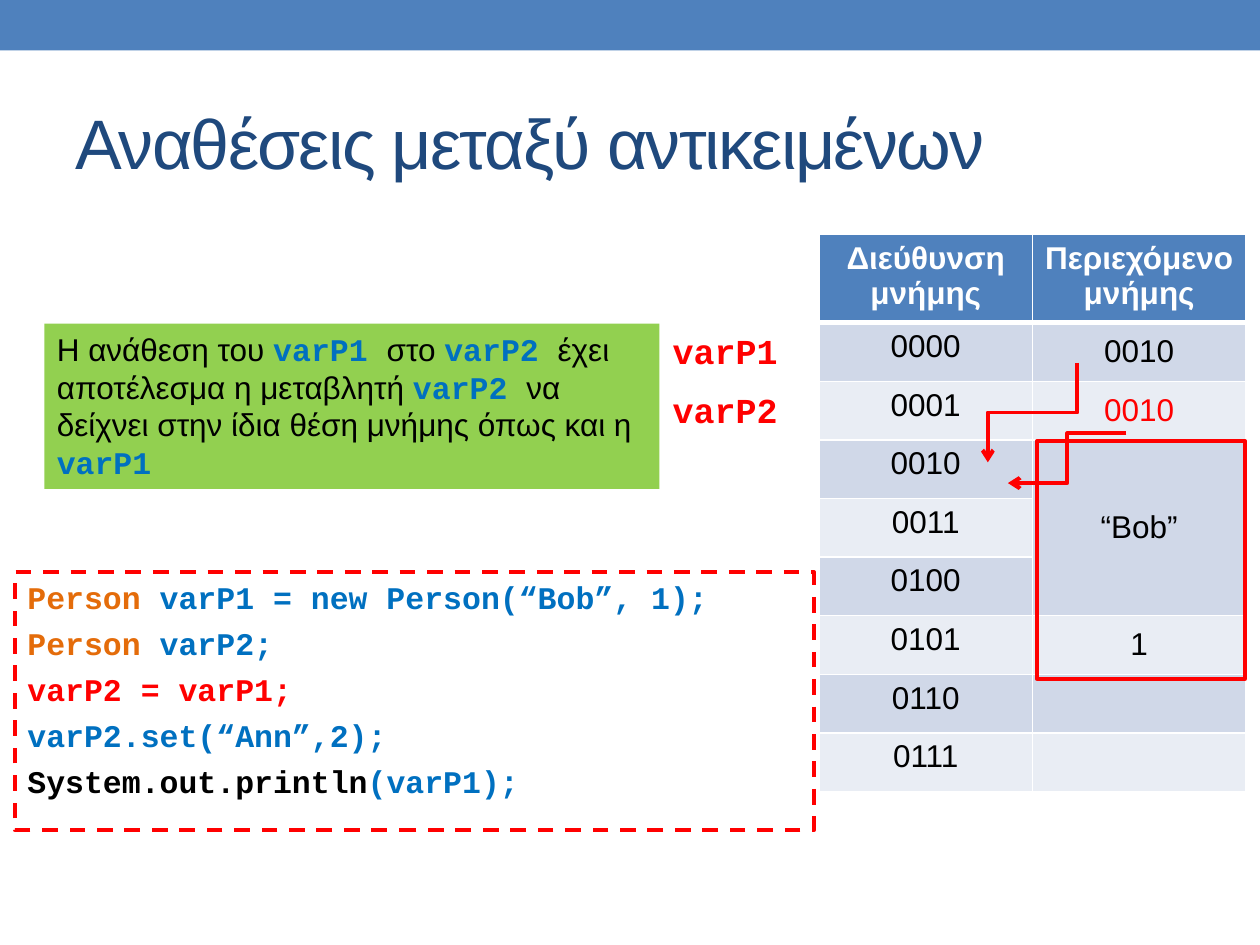
from pptx import Presentation
from pptx.dml.color import RGBColor
from pptx.enum.dml import MSO_LINE
from pptx.enum.shapes import MSO_CONNECTOR, MSO_SHAPE
from pptx.enum.text import MSO_ANCHOR as Anchor, PP_ALIGN as Align
from pptx.oxml.ns import qn
from pptx.util import Pt
from lxml.etree import SubElement

BLUE, RED, BLACK, WHITE = "4F81BD", "FF0000", "000000", "FFFFFF"
CODE_BLUE, ORANGE = "0070C0", "E46C0A"
SANS, MONO = "Arial", "Courier New"


def color(value):
    return RGBColor.from_string(value)


def set_font(font, name, size, value, bold=False):
    font.name, font.size, font.bold = name, Pt(size), bold
    font.color.rgb = color(value)


deck = Presentation()
deck.slide_width, deck.slide_height = Pt(720), Pt(540)
page = deck.slides.add_slide(deck.slide_layouts[6])
shapes = page.shapes

# Top band
band = shapes.add_shape(MSO_SHAPE.RECTANGLE, 0, 0, Pt(720), Pt(28.8))
band.shadow.inherit = False
band.fill.solid()
band.fill.fore_color.rgb = color(BLUE)
band.line.fill.background()

# Title
title = shapes.add_textbox(Pt(36), Pt(42), Pt(648), Pt(78)).text_frame
title.word_wrap = True
title.vertical_anchor = Anchor.MIDDLE
span = title.paragraphs[0].add_run()
span.text = "Αναθέσεις μεταξύ αντικειμένων"
set_font(span.font, SANS, 40, "1F497D")
span._r.get_or_add_rPr().set("spc", "-100")

# Code in a dashed frame
code_lines = [
    [("Person ", ORANGE), ("varP1 = new Person(“Bob”, 1);", CODE_BLUE)],
    [("Person ", ORANGE), ("varP2;", CODE_BLUE)],
    [("varP2 = varP1;", RED)],
    [("varP2.set(“Ann”,2);", CODE_BLUE)],
    [("System.out.println", BLACK), ("(varP1);", CODE_BLUE)],
]
code_box = shapes.add_textbox(Pt(8.6), Pt(326.9), Pt(456.5), Pt(147.6))
code_box.line.color.rgb = color(RED)
code_box.line.width = Pt(2.25)
code_box.line.dash_style = MSO_LINE.DASH
code = code_box.text_frame
code.word_wrap = True
for index, parts in enumerate(code_lines):
    para = code.add_paragraph() if index else code.paragraphs[0]
    para.space_before = Pt(4.7) if index else Pt(0)
    for text, value in parts:
        span = para.add_run()
        span.text = text
        set_font(span.font, MONO, 18, value, True)

# Memory table
contents = ["0010", "0010", "“Bob”", "", "", "1", "", ""]
rows = [("Διεύθυνση μνήμης", "Περιεχόμενο μνήμης")]
rows += [(f"{address:04b}", content) for address, content in enumerate(contents)]
table = shapes.add_table(len(rows), 2, Pt(468), Pt(134), Pt(244), Pt(315)).table
for column in table.columns:
    column.width = Pt(122)
for r, row in enumerate(rows):
    table.rows[r].height = Pt(33.5 if r else 46.8)
    for c, text in enumerate(row):
        cell = table.cell(r, c)
        cell.text = text
        if r and c:
            cell.vertical_anchor = Anchor.MIDDLE
        para = cell.text_frame.paragraphs[0]
        para.alignment = Align.CENTER
        value = WHITE if r == 0 else RED if (r, c) == (2, 1) else BLACK
        set_font(para.font, SANS, 18, value, r == 0)
        # White cell borders, thicker under the header
        properties = cell._tc.get_or_add_tcPr()
        for side in "LRTB":
            thick = (r, side) in ((0, "B"), (1, "T"))
            border = SubElement(properties, qn(f"a:ln{side}"), w=str(Pt(3 if thick else 1)))
            fill = SubElement(border, qn("a:solidFill"))
            SubElement(fill, qn("a:srgbClr"), val=WHITE)
        cell.fill.solid()
        band_fill = "D0D8E8" if r % 2 else "E9EDF4"
        cell.fill.fore_color.rgb = color(band_fill if r else BLUE)
table.cell(3, 1).merge(table.cell(5, 1))

# Variable names beside their memory rows
for name, top in (("varP1", 185), ("varP2", 218.2)):
    label = shapes.add_textbox(Pt(377.3), Pt(top), Pt(75), Pt(31.5)).text_frame
    label.word_wrap = False
    para = label.paragraphs[0]
    para.text = name
    set_font(para.font, MONO, 20, RED, True)

# Reference arrows: begin, end, quarter turns
arrows = [
    (561.6, 210.2, 618.5, 261.3, 1),
    (643.7, 247.7, 576, 276.1, 0),
]
for x1, y1, x2, y2, turns in arrows:
    arrow = shapes.add_connector(MSO_CONNECTOR.ELBOW, Pt(x1), Pt(y1), Pt(x2), Pt(y2))
    arrow.line.color.rgb = color(RED)
    arrow.line.width = Pt(2.25)
    SubElement(arrow.line._get_or_add_ln(), qn("a:tailEnd"), type="arrow")
    properties = arrow._element.spPr
    SubElement(properties, qn("a:effectLst"))
    if turns:
        properties.find(qn("a:xfrm")).set("rot", str(turns * 90 * 60000))

# Explanation
note_box = shapes.add_textbox(Pt(25.4), Pt(185), Pt(351.5), Pt(94.4))
note_box.fill.solid()
note_box.fill.fore_color.rgb = color("92D050")
note = note_box.text_frame
note.word_wrap = True
note_parts = [
    "Η ανάθεση του ", "varP1 ", "στο ", "varP2 ",
    "έχει αποτέλεσμα η μεταβλητή ", "varP2 ",
    "να δείχνει στην ίδια θέση μνήμης όπως και η ", "varP1",
]
for text in note_parts:
    span = note.paragraphs[0].add_run()
    span.text = text
    if text.startswith("var"):
        set_font(span.font, MONO, 18, CODE_BLUE, True)
    else:
        set_font(span.font, SANS, 18, BLACK)

# Frame around the object's memory
frame = shapes.add_shape(MSO_SHAPE.RECTANGLE, Pt(592.6), Pt(252), Pt(118.8), Pt(136))
frame.shadow.inherit = False
frame.fill.background()
frame.line.color.rgb = color(RED)
frame.line.width = Pt(2.08)

deck.save("out.pptx")
